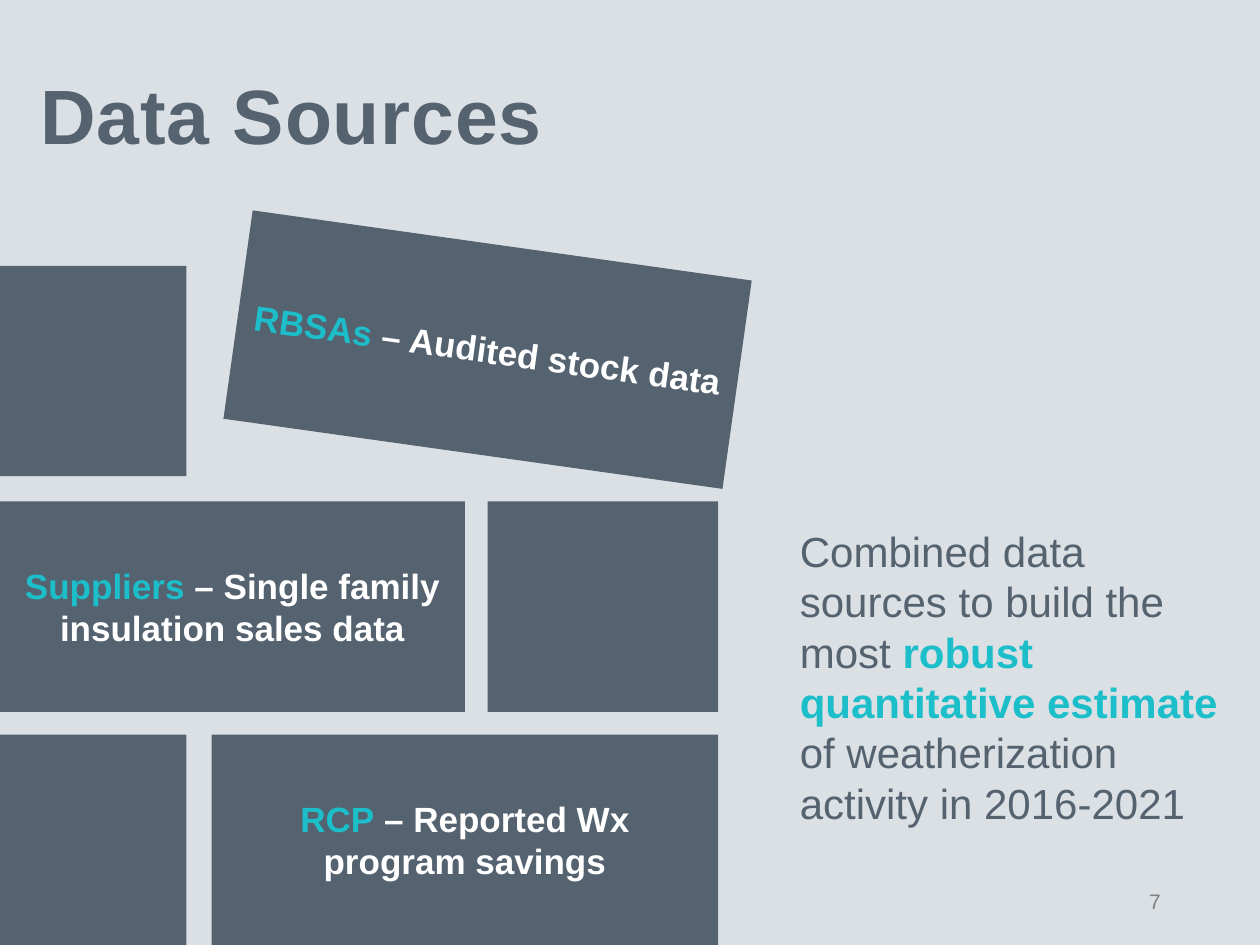
from pptx import Presentation
from pptx.dml.color import RGBColor
from pptx.enum.shapes import MSO_SHAPE
from pptx.enum.text import MSO_ANCHOR as ANCHOR, PP_ALIGN as ALIGN
from pptx.util import Inches, Pt

SLATE, TEAL, WHITE, GREY, PALE = "556270", "1CBECA", "FFFFFF", "808080", "DBE0E4"

TITLE = "Data Sources"
SUMMARY = [
    ("Combined data sources to build the most ", SLATE, False),
    ("robust quantitative estimate ", TEAL, True),
    ("of weatherization activity in 2016-2021", SLATE, False),
]
PAGE_NUMBER = "7"

BRICK_HEIGHT = 1.67
BRICKS = [
    (0, 2.11, 1.48, 0, 0.1, None),
    (1.87, 1.94, 4, 8, 0.1, ("RBSAs", " – Audited stock data")),
    (0, 3.98, 3.69, 0, 0.1, ("Suppliers", " – Single family insulation sales data")),
    (3.87, 3.98, 1.83, 0, 0.1, None),
    (0, 5.83, 1.48, 0, 0.1, None),
    (1.68, 5.83, 4.02, 0, 0.2, ("RCP", " – Reported Wx program savings")),
]


def rgb(color):
    return RGBColor.from_string(color)


def place(shape, left, top, width, height):
    shape.left, shape.top = Inches(left), Inches(top)
    shape.width, shape.height = Inches(width), Inches(height)


def write(shape, runs, size, align=ALIGN.LEFT, anchor=ANCHOR.MIDDLE):
    frame = shape.text_frame
    frame.word_wrap = True
    frame.vertical_anchor = anchor
    paragraph = frame.paragraphs[0]
    paragraph.alignment = align
    paragraph.font.name = "Arial"
    paragraph.font.size = Pt(size)
    for text, color, bold in runs:
        run = paragraph.add_run()
        run.text = text
        run.font.name = "Arial"
        run.font.size = Pt(size)
        run.font.bold = bold
        run.font.color.rgb = rgb(color)
    return paragraph


def add_brick(slide, left, top, width, rotation, inset, label):
    brick = slide.shapes.add_shape(
        MSO_SHAPE.RECTANGLE, Inches(left), Inches(top), Inches(width), Inches(BRICK_HEIGHT))
    brick.rotation = rotation
    brick.shadow.inherit = False
    brick.fill.solid()
    brick.fill.fore_color.rgb = rgb(SLATE)
    brick.line.fill.background()
    if label:
        source, detail = label
        brick.text_frame.margin_left = brick.text_frame.margin_right = Inches(inset)
        write(brick, [(source, TEAL, True), (detail, WHITE, True)], 20, ALIGN.CENTER)


def main():
    deck = Presentation()
    deck.slide_width, deck.slide_height = Inches(10), Inches(7.5)
    slide = deck.slides.add_slide(deck.slide_layouts[5])
    slide.background.fill.solid()
    slide.background.fill.fore_color.rgb = rgb(PALE)

    title = slide.shapes.title
    place(title, 0.22, 0.27, 4.25, 1.35)
    heading = write(title, [(TITLE, SLATE, True)], 44)
    heading.line_spacing = 0.9
    heading.runs[0].font._element.set("spc", "50")

    for brick in BRICKS:
        add_brick(slide, *brick)

    summary = slide.shapes.add_textbox(0, 0, 0, 0)
    place(summary, 6.25, 4.12, 3.54, 2.55)
    statement = write(summary, SUMMARY, 24, anchor=ANCHOR.TOP)
    statement.space_before, statement.space_after = Pt(10), Pt(6)

    page_number = slide.shapes.add_textbox(0, 0, 0, 0)
    place(page_number, 7.06, 6.95, 2.25, 0.4)
    write(page_number, [(PAGE_NUMBER, GREY, False)], 12, ALIGN.RIGHT)

    deck.save("out.pptx")


if __name__ == "__main__":
    main()
